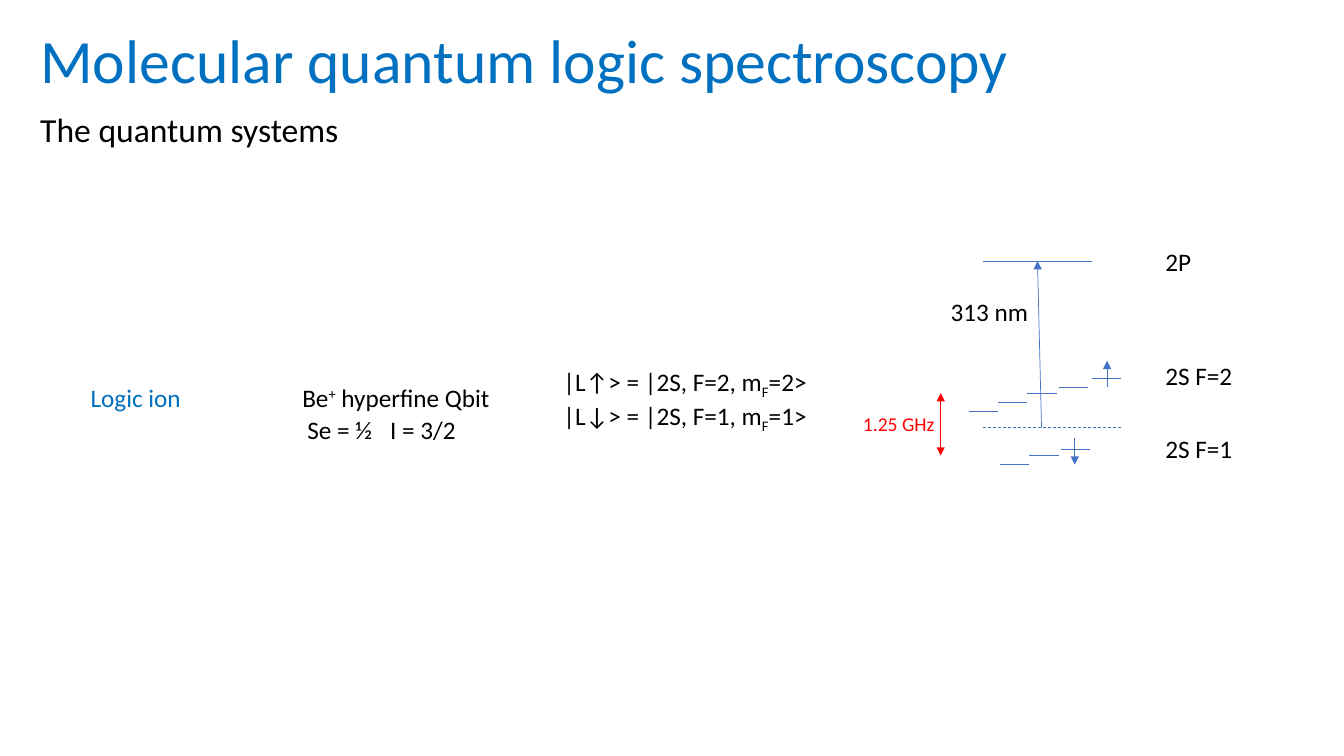
from lxml.etree import SubElement
from pptx import Presentation
from pptx.dml.color import RGBColor as RGB
from pptx.enum.dml import MSO_LINE as Dash
from pptx.enum.shapes import MSO_CONNECTOR as Conn
from pptx.enum.text import MSO_AUTO_SIZE as Fit
from pptx.oxml.ns import qn
from pptx.util import Inches, Pt

COLORS = {
    "title": "0070C0",
    "ion": "016FBF",
    "text": "000000",
    "level": "4472C4",
    "split": "FF0000",
}
FONT = "Calibri"
STEP = 0.29  # length of one sublevel
SUBLEVELS = {
    "F=1": [(9.92, 4.61), (10.21, 4.52), (10.52, 4.46)],
    "F=2": [(9.61, 4.08), (9.9, 3.99), (10.19, 3.9), (10.5, 3.84), (10.83, 3.75)],
}


def add_text(slide, box, lines, size=18, color="text"):
    """Each line is a list of (text, baseline percent) parts, or a plain string."""
    frame = slide.shapes.add_textbox(*map(Inches, box)).text_frame
    frame.word_wrap = False
    frame.auto_size = Fit.SHAPE_TO_FIT_TEXT
    for i, line in enumerate(lines):
        para = frame.add_paragraph() if i else frame.paragraphs[0]
        parts = [(line, 0)] if isinstance(line, str) else line
        for text, base in parts:
            run = para.add_run()
            run.text = text
            font = run.font
            font.name, font.size = FONT, Pt(size)
            font.color.rgb = RGB.from_string(COLORS[color])
            if base:
                run._r.get_or_add_rPr().set("baseline", str(base * 1000))


def add_line(slide, start, end, color="level", dash=None, ends=()):
    """Draw a thin line; ends lists the arrowheads, headEnd before tailEnd."""
    line = slide.shapes.add_connector(
        Conn.STRAIGHT, *map(Inches, (*start, *end)))
    line.line.color.rgb = RGB.from_string(COLORS[color])
    line.line.width = Pt(0.5)
    if dash:
        line.line.dash_style = dash
    for end_tag in ends:
        SubElement(line.line._get_or_add_ln(), qn("a:" + end_tag), type="triangle")
    SubElement(line._element.spPr, qn("a:effectLst"))


def add_words(slide):
    add_text(slide, (0.3, 0.17, 9.91, 0.84),
             ["Molecular quantum logic spectroscopy"], 44, "title")
    add_text(slide, (0.3, 1.03, 3.19, 0.5), ["The quantum systems"], 24)
    add_text(slide, (0.8, 3.74, 1.11, 0.4), ["Logic ion"], color="ion")
    add_text(slide, (2.9, 3.74, 2.14, 0.4),
             [[("Be", 0), ("+", 30), (" hyperfine Qbit", 0)]])
    add_text(slide, (2.95, 4.06, 0.85, 0.4), ["Se = ½"])
    add_text(slide, (3.77, 4.06, 0.85, 0.4), ["I = 3/2"])
    states = [[(f"|L{spin}> = |2S, F={f}, m", 0), ("F", -25), (f"={f}>", 0)]
              for spin, f in (("↑", 2), ("↓", 1))]
    add_text(slide, (5.49, 3.58, 2.69, 0.71), states)


def add_levels(slide):
    for steps in SUBLEVELS.values():
        for x, y in steps:
            add_line(slide, (x, y), (x + STEP, y))
    add_line(slide, (9.75, 2.59), (10.83, 2.59))
    add_line(slide, (9.75, 4.24), (11.12, 4.24), dash=Dash.DASH)
    for name, y, width in (("2P", 2.39, 0.46), ("2S F=2", 3.53, 0.87),
                           ("2S F=1", 4.25, 0.87)):
        add_text(slide, (11.46, y, width, 0.4), [name])


def add_arrows(slide):
    tail = ["tailEnd"]
    add_line(slide, (10.66, 4.35), (10.66, 4.61), ends=tail)
    add_line(slide, (10.98, 3.84), (10.98, 3.58), ends=tail)
    add_line(slide, (10.33, 4.24), (10.29, 2.59), ends=tail)
    add_text(slide, (9.33, 2.89, 0.98, 0.4), ["313 nm"])
    add_line(slide, (9.33, 3.9), (9.33, 4.52), "split",
             ends=["headEnd", "tailEnd"])
    add_text(slide, (8.46, 4.04, 0.92, 0.34), ["1.25 GHz"], 14, "split")


def main():
    deck = Presentation()
    deck.slide_width, deck.slide_height = Inches(13.33), Inches(7.5)
    slide = deck.slides.add_slide(deck.slide_layouts[6])
    add_words(slide)
    add_levels(slide)
    add_arrows(slide)
    deck.save("out.pptx")


if __name__ == "__main__":
    main()
